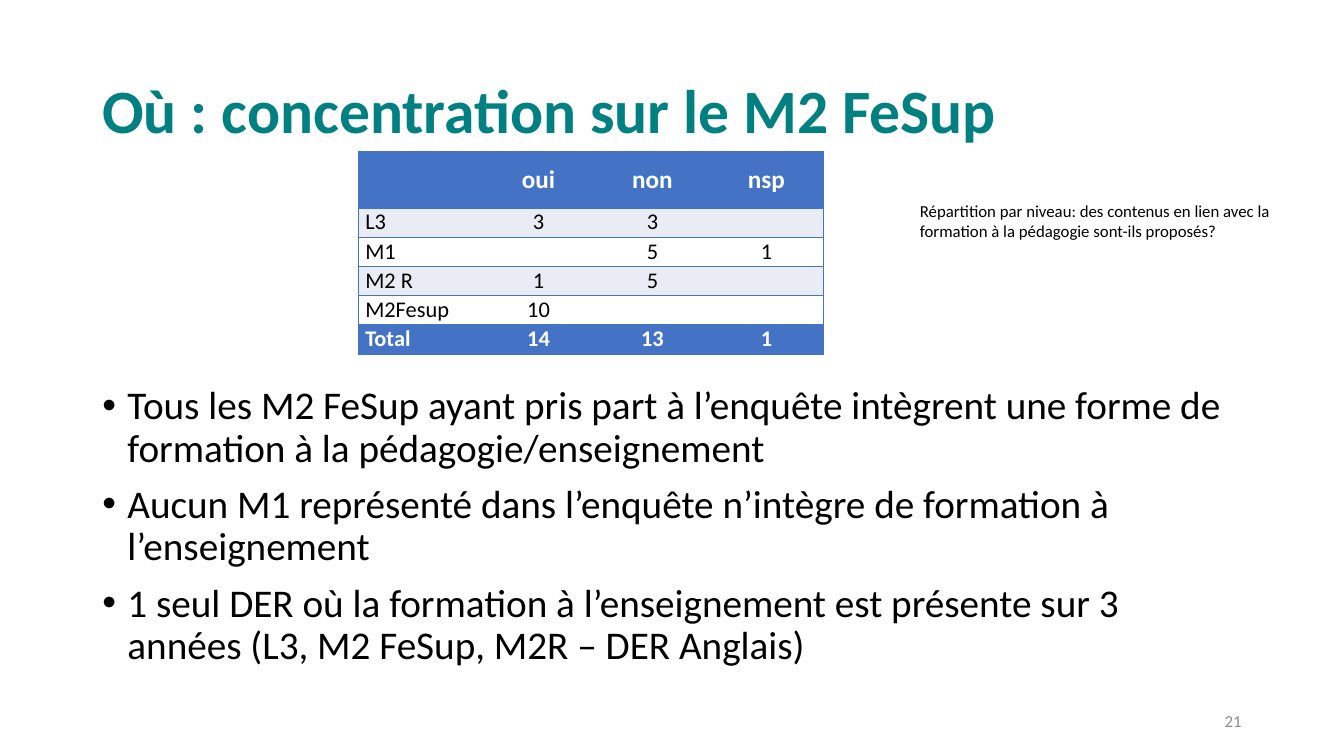
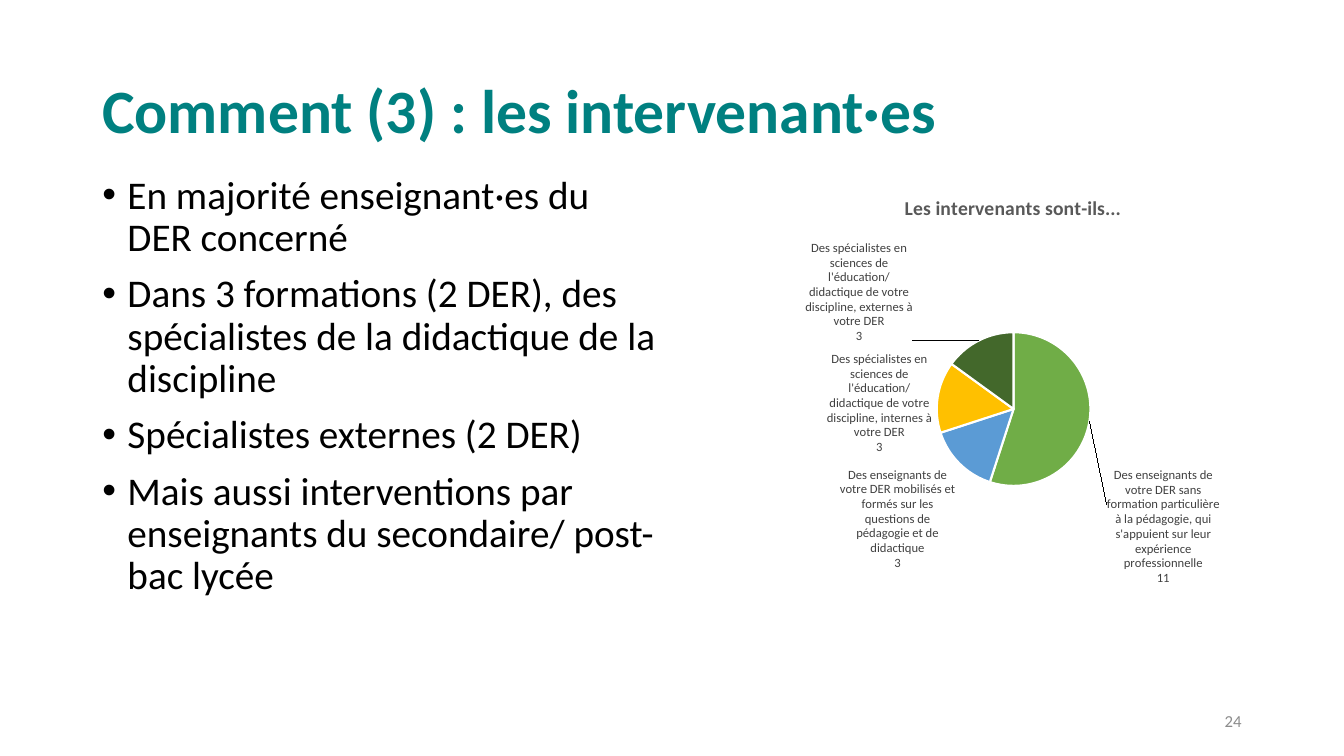
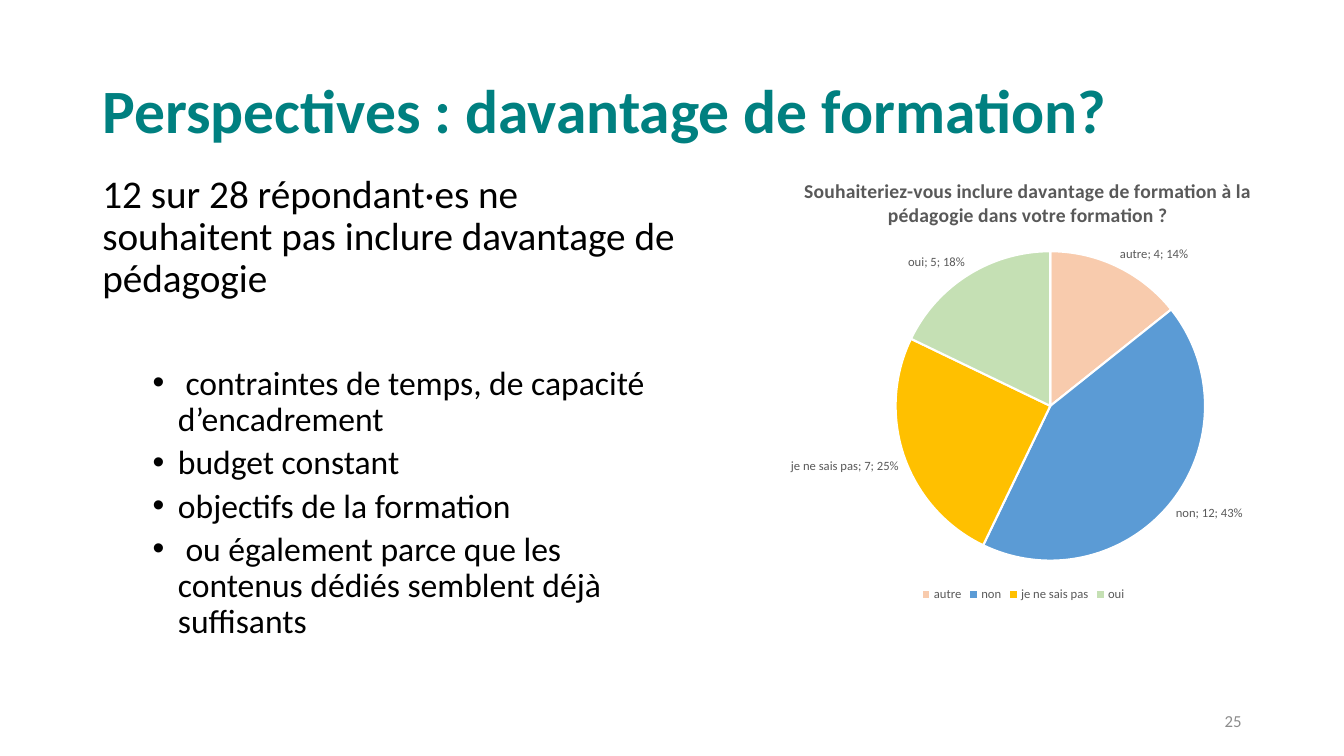
import copy

import pptx
import pptx.chart.data
import pptx.dml.color
import pptx.enum.chart
import pptx.enum.text
import pptx.oxml
import pptx.oxml.ns
import pptx.util
from lxml import etree

Pt = pptx.util.Pt
qn = pptx.oxml.ns.qn
Align = pptx.enum.text.PP_ALIGN
Anchor = pptx.enum.text.MSO_ANCHOR
Place = pptx.enum.chart.XL_LABEL_POSITION


def rgb(code):
    return pptx.dml.color.RGBColor.from_string(code)


def xml(text, *names):
    head, tail = text.split(">", 1)
    mark = "/" if head.endswith("/") else ""
    head = head.rstrip("/")
    return pptx.oxml.parse_xml(f"{head} {pptx.oxml.ns.nsdecls(*names)}{mark}>{tail}")


def spot(x, y, w=None, h=None, edge=True):
    """Manual chart layout, in shares of the chart's size."""
    mode = '<c:xMode val="edge"/><c:yMode val="edge"/>' if edge else ""
    inner = '<c:layoutTarget val="inner"/>' if w else ""
    size = f'<c:w val="{w}"/><c:h val="{h}"/>' if w else ""
    return xml(f'<c:layout><c:manualLayout>{inner}{mode}<c:x val="{x}"/>'
               f'<c:y val="{y}"/>{size}</c:manualLayout></c:layout>', "c")


class Deck:
    FONT = "Calibri"
    TEAL, BLUE, BAND = "008080", "4472C4", "E9EBF5"
    BLACK, WHITE, GREY, PAGE = "000000", "FFFFFF", "595959", "8C8C8C"
    LEFT, WIDE = 66, 828

    def __init__(self):
        self.prs = pptx.Presentation()
        self.prs.slide_width, self.prs.slide_height = Pt(960), Pt(540)
        self.slide = None

    # Shared frame: title and page number
    def page(self, title, number):
        self.slide = self.prs.slides.add_slide(self.prs.slide_layouts[6])
        head = self.text((self.LEFT, 28.8, self.WIDE, 104.4), [title], 44,
                         self.TEAL, bold=True, anchor=Anchor.MIDDLE)
        head.paragraphs[0].line_spacing = 0.9
        self.text((678, 500.4, 216, 28.8), [str(number)], 12, self.PAGE,
                  align=Align.RIGHT, anchor=Anchor.MIDDLE)

    def style(self, font, size, color, bold=False):
        font.name, font.size, font.bold = self.FONT, Pt(size), bold
        font.color.rgb = rgb(color)

    def text(self, box, lines, size, color=BLACK, bold=False,
             align=Align.LEFT, anchor=Anchor.TOP):
        frame = self.slide.shapes.add_textbox(*map(Pt, box)).text_frame
        frame.word_wrap = True
        frame.vertical_anchor = anchor
        frame.text = "\n".join(lines)
        for para in frame.paragraphs:
            para.alignment = align
            for run in para.runs:
                self.style(run.font, size, color, bold)
        return frame

    # Body text: one indent (or None for plain text) for each size
    def body(self, box, lines, size=28, indent=18, gap=10):
        frame = self.text(box, lines, size)
        for para in frame.paragraphs:
            para.line_spacing = 0.9
            para.space_before = Pt(gap)
            if indent:
                self.bullet(para, indent)
        return frame

    def bullet(self, para, indent):
        props = para._p.get_or_add_pPr()
        props.set("marL", str(Pt(indent)))
        props.set("indent", str(-Pt(18)))
        props.append(xml('<a:buFont typeface="Arial"/>', "a"))
        props.append(xml('<a:buChar char="•"/>', "a"))

    # Table with a blue first and last row
    def table(self, box, rows, widths, heights):
        frame = self.slide.shapes.add_table(len(rows), len(widths), *map(Pt, box))
        grid = frame.table
        grid.first_row = grid.horz_banding = False
        grid._tbl.tblPr[0].text = "{2D5ABB26-0587-4C30-8999-92F81FD0307C}"
        for col, width in zip(grid.columns, widths):
            col.width = Pt(width)
        last = len(rows) - 1
        for r, (row, height) in enumerate(zip(rows, heights)):
            grid.rows[r].height = Pt(height)
            strong = r in (0, last)
            fill = self.BLUE if strong else (self.BAND if r % 2 else self.WHITE)
            for c, word in enumerate(row):
                cell = grid.cell(r, c)
                self.cell(cell, word, fill, 16 if r else 18, strong)
                cell.vertical_anchor = Anchor.TOP if r else Anchor.MIDDLE
                para = cell.text_frame.paragraphs[0]
                para.alignment = Align.CENTER if c else Align.JUSTIFY
                sides = ["lnL"] * (c == 0) + ["lnR"] * (c == len(row) - 1)
                self.border(cell, sides + ["lnT", "lnB"])

    def cell(self, cell, word, fill, size, strong):
        cell.margin_left = cell.margin_right = Pt(5)
        cell.margin_top = cell.margin_bottom = 0
        cell.fill.solid()
        cell.fill.fore_color.rgb = rgb(fill)
        cell.text = word
        para = cell.text_frame.paragraphs[0]
        for run in para.runs:
            self.style(run.font, size, self.WHITE if strong else self.BLACK, strong)
        if not word:
            etree.SubElement(para._p, qn("a:endParaRPr")).set("sz", str(size * 100))

    def border(self, cell, sides):
        props = cell._tc.get_or_add_tcPr()
        for i, side in enumerate(sides):
            props.insert(i, xml(
                f'<a:{side} w="12700"><a:solidFill><a:srgbClr val="{self.BLUE}"/>'
                f'</a:solidFill></a:{side}>', "a"))

    # Pie chart; moved maps a slice to its label's shift
    def pie(self, box, title, data, colors, head, plot, place, ink, split,
            percent=False, legend=False, moved=None):
        info = pptx.chart.data.CategoryChartData()
        info.categories = [name for name, _ in data]
        info.add_series("Series 1", [value for _, value in data])
        chart = self.slide.shapes.add_chart(
            pptx.enum.chart.XL_CHART_TYPE.PIE, *map(Pt, box), info).chart
        self.style(chart.font, 10, self.BLACK)
        chart.has_title = True
        chart.chart_title.text_frame.text = title
        for run in chart.chart_title.text_frame.paragraphs[0].runs:
            self.style(run.font, 14, self.GREY, True)
        self.place(chart.chart_title._element, spot(*head), "c:tx")
        area = chart._chartSpace.chart.plotArea
        for old in area.findall(qn("c:layout")):
            area.remove(old)
        area.insert(0, spot(*plot))
        chart.has_legend = legend
        if legend:
            chart.legend.position = pptx.enum.chart.XL_LEGEND_POSITION.BOTTOM
            chart.legend.include_in_layout = False
            self.style(chart.legend.font, 9, self.GREY)
        chart.plots[0].vary_by_categories = True
        series = chart.plots[0].series[0]
        for i, color in enumerate(colors):
            form = series.points[i].format
            form.fill.solid()
            form.fill.fore_color.rgb = rgb(color)
            form.line.color.rgb = rgb(self.WHITE)
            form.line.width = Pt(1.5)
        self.labels(series.data_labels, place, ink, split, percent, moved or {})

    def place(self, node, layout, after):
        for old in node.findall(qn("c:layout")):
            node.remove(old)
        node.find(qn(after)).addnext(layout)

    def labels(self, labels, place, ink, split, percent, moved):
        self.style(labels.font, 9, ink)
        labels.position = place
        labels.show_value = labels.show_category_name = True
        labels.show_percentage = percent
        root = labels._element
        mark = etree.Element(qn("c:separator"))
        mark.text = split
        root.find(qn("c:showBubbleSize")).addnext(mark)
        shared = [part for part in root if part.tag != qn("c:showLeaderLines")]
        for i, (slot, shift) in enumerate(moved.items()):
            label = xml(f'<c:dLbl><c:idx val="{slot}"/></c:dLbl>', "c")
            label.append(spot(*shift, edge=False))
            label.extend(copy.deepcopy(shared))
            root.insert(i, label)

    def save(self):
        self.prs.save("out.pptx")


def main():
    deck = Deck()

    # Where: table by level
    deck.page("Où : concentration sur le M2 FeSup", 21)
    deck.body((deck.LEFT, 272, deck.WIDE, 214), [
        "Tous les M2 FeSup ayant pris part à l’enquête intègrent une forme de "
        "formation à la pédagogie/enseignement",
        "Aucun M1 représenté dans l’enquête n’intègre de formation à l’enseignement",
        "1 seul DER où la formation à l’enseignement est présente sur 3 années "
        "(L3, M2 FeSup, M2R – DER Anglais)"])
    deck.text((650, 139.7, 271.4, 36), [
        "Répartition par niveau: des contenus en lien avec la formation à la "
        "pédagogie sont-ils proposés?"], 12)
    deck.table((256, 108, 332, 145), [
        ["", "oui", "non", "nsp"],
        ["L3", "3", "3", ""],
        ["M1", "", "5", "1"],
        ["M2 R", "1", "5", ""],
        ["M2Fesup", "10", "", ""],
        ["Total", "14", "13", "1"]],
        [88] + [81.4] * 3, [41] + [20.8] * 5)

    # How: who teaches
    deck.page("Comment (3) : les intervenant·es", 24)
    deck.body((deck.LEFT, 121.7, 412, 365), [
        "En majorité enseignant·es du DER concerné",
        "Dans 3 formations (2 DER), des spécialistes de la didactique de la discipline",
        "Spécialistes externes (2 DER)",
        "Mais aussi interventions par enseignants du secondaire/ post-bac lycée"])
    expert = ("Des spécialistes en sciences de l'éducation/didactique de votre "
              "discipline, {} à votre DER")
    deck.pie((516, 121.7, 412, 296.6), "Les intervenants sont-ils...", [
        ("Des enseignants de votre DER sans formation particulière à la pédagogie, "
         "qui s'appuient sur leur expérience professionnelle", 11),
        ("Des enseignants de votre DER mobilisés et formés sur les questions de "
         "pédagogie et de didactique", 3),
        (expert.format("internes"), 3),
        (expert.format("externes"), 3)],
        ["70AD47", "5B9BD5", "FFC000", "43682B"],
        head=(0.31, 0.05), plot=(0.37, 0.39, 0.27, 0.37), place=Place.BEST_FIT,
        ink="404040", split="\n", moved={0: (0.02, 0.2), 3: (-0.11, 0.02)})

    # Outlook: more training?
    deck.page("Perspectives : davantage de formation?", 25)
    box = (deck.LEFT, 121, 425, 100)
    deck.body(box, ["12 sur 28 répondant·es ne souhaitent pas inclure davantage "
                    "de pédagogie"], indent=None)
    deck.body((deck.LEFT, 258, 425, 228), [
        " contraintes de temps, de capacité d’encadrement",
        "budget constant",
        "objectifs de la formation",
        " ou également parce que les contenus dédiés semblent déjà suffisants"],
        size=24, indent=54, gap=5)
    deck.pie((490, 108, 482, 325),
             "Souhaiteriez-vous inclure davantage de formation à la pédagogie "
             "dans votre formation ?",
             [("autre", 4), ("non", 12), ("je ne sais pas", 7), ("oui", 5)],
             ["F8CBAD", "5B9BD5", "FFC000", "C5E0B4"],
             head=(0.17, 0.05), plot=(0.31, 0.22, 0.46, 0.68),
             place=Place.OUTSIDE_END, ink=deck.GREY, split="; ",
             percent=True, legend=True)

    deck.save()


if __name__ == "__main__":
    main()
